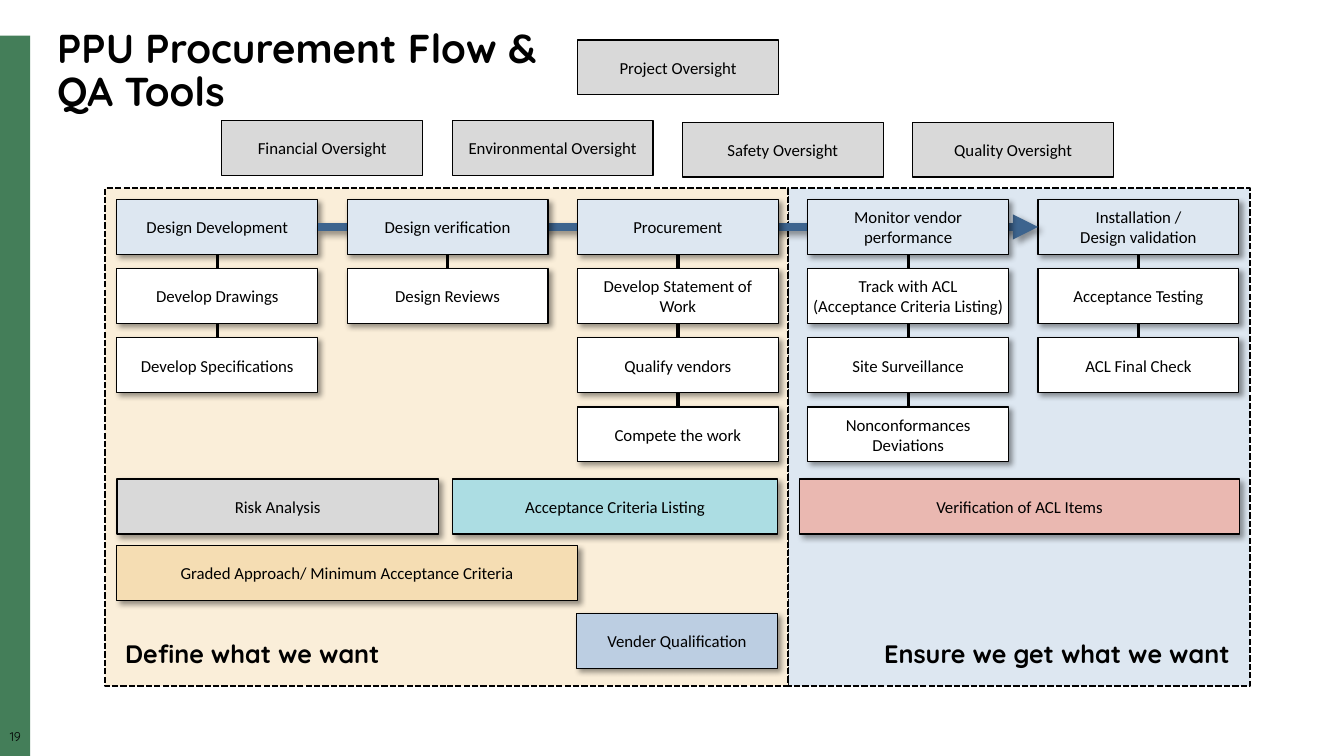
from lxml.etree import SubElement
from pptx import Presentation
from pptx.dml.color import RGBColor
from pptx.enum.dml import MSO_LINE
from pptx.enum.shapes import MSO_CONNECTOR, MSO_SHAPE
from pptx.enum.text import MSO_ANCHOR, PP_ALIGN
from pptx.oxml.ns import qn
from pptx.util import Pt

COLOURS = {
    "green": "447E59", "black": "000000", "white": "FFFFFF", "grey": "D9D9D9",
    "cream": "FAEED9", "pale blue": "DDE7F1", "arrow": "3D648E", "sand": "F5DDB3",
    "teal": "ACDDE3", "rose": "EAB8B1", "blue": "BCCEE2",
}
CARD_WIDTH, CARD_HEIGHT = 143.5, 39.2
COLUMN_PITCH, ROW_PITCH = 164.5, 49.4

# Each column: its heading, then its steps
COLUMNS = [
    ["Design Development", "Develop Drawings", "Develop Specifications"],
    ["Design verification", "Design Reviews"],
    ["Procurement", "Develop Statement of Work", "Qualify vendors", "Compete the work"],
    ["Monitor vendor performance", "Track with ACL\n(Acceptance Criteria Listing)",
     "Site Surveillance", "Nonconformances Deviations"],
    ["Installation /\nDesign validation", "Acceptance Testing", "ACL Final Check"],
]
# Left and top within the panels, width, text, colour
TOOLS = [
    (8.6, 248.2, 329, "Graded Approach/ Minimum Acceptance Criteria", "sand"),
    (8.6, 200.7, 229.7, "Risk Analysis", "grey"),
    (248.4, 200.7, 232.2, "Acceptance Criteria Listing", "teal"),
    (496.1, 200.7, 314.6, "Verification of ACL Items", "rose"),
    (337, 296.7, CARD_WIDTH, "Vender Qualification", "blue"),
]
OVERSIGHTS = ["Financial Oversight", "Environmental Oversight",
              "Safety Oversight", "Quality Oversight"]


def colour(name):
    return RGBColor.from_string(COLOURS[name])


def set_effects(shape, shadow):
    """Give the shape a soft shadow, or an empty effect list."""
    effects = SubElement(shape._element.spPr, qn("a:effectLst"))
    if shadow:
        outer = SubElement(effects, qn("a:outerShdw"), blurRad=str(Pt(4)),
                           dist=str(Pt(3)), dir="2700000", algn="tl", rotWithShape="0")
        black = SubElement(outer, qn("a:srgbClr"), val=COLOURS["black"])
        SubElement(black, qn("a:alpha"), val="40000")


def write(frame, text, size, font="Calibri", align=PP_ALIGN.CENTER, bold=False, spacing=None):
    frame.word_wrap = True
    for index, line in enumerate(text.split("\n")):
        paragraph = frame.add_paragraph() if index else frame.paragraphs[0]
        paragraph.text = line
        paragraph.alignment = align
        paragraph.line_spacing = spacing
        paragraph.font.name = font
        paragraph.font.size = Pt(size)
        paragraph.font.bold = bold
        paragraph.font.color.rgb = colour("black")


def add_rectangle(slide, left, top, width, height, fill):
    shape = slide.shapes.add_shape(MSO_SHAPE.RECTANGLE, Pt(left), Pt(top), Pt(width), Pt(height))
    shape.fill.solid()
    shape.fill.fore_color.rgb = colour(fill)
    return shape


def add_card(slide, left, top, text, fill, width=CARD_WIDTH, shadow=True, side_inset=7.2):
    card = add_rectangle(slide, left, top, width, CARD_HEIGHT, fill)
    card.line.color.rgb = colour("black")
    card.line.width = Pt(0.85)
    set_effects(card, shadow)
    frame = card.text_frame
    frame.vertical_anchor = MSO_ANCHOR.MIDDLE
    frame.margin_left = frame.margin_right = Pt(side_inset)
    write(frame, text, 12)
    return card


def add_link(slide, start, start_side, end, end_side, line_colour, width, arrow=False):
    link = slide.shapes.add_connector(MSO_CONNECTOR.STRAIGHT, 0, 0, 0, 0)
    link.begin_connect(start, start_side)
    link.end_connect(end, end_side)
    link.line.color.rgb = colour(line_colour)
    link.line.width = Pt(width)
    if arrow:
        SubElement(link.line._get_or_add_ln(), qn("a:tailEnd"), type="triangle")
    set_effects(link, shadow=arrow)


def add_panel(slide, left, top, width, height, text, fill, align):
    panel = add_rectangle(slide, left, top, width, height, fill)
    panel.shadow.inherit = False
    panel.line.color.rgb = colour("black")
    panel.line.width = Pt(1.5)
    panel.line.dash_style = MSO_LINE.SQUARE_DOT
    frame = panel.text_frame
    frame.vertical_anchor = MSO_ANCHOR.BOTTOM
    frame.margin_left = frame.margin_right = Pt(14.4)
    frame.margin_bottom = Pt(12)
    write(frame, text, 18, "Quicksand", align, bold=True, spacing=0.9)


def add_column(slide, left, top, labels):
    """Stack a heading and its steps, linked downwards; return the heading."""
    cards = []
    for row, label in enumerate(labels):
        cards.append(add_card(slide, left, top + row * ROW_PITCH, label,
                              "white" if row else "pale blue",
                              side_inset=0 if "(" in label else 7.2))
    for upper, lower in zip(cards, cards[1:]):
        add_link(slide, upper, 2, lower, 0, "black", 2.25)
    return cards[0]


def add_flow(slide, left, top):
    def column(index):
        return add_column(slide, left + index * COLUMN_PITCH, top, COLUMNS[index])

    # The arrow runs behind the middle columns
    first, last = column(0), column(4)
    add_link(slide, first, 3, last, 1, "arrow", 6, arrow=True)
    for index in (1, 2, 3):
        column(index)


def add_tools(slide, left, top):
    for x, y, width, text, fill in TOOLS:
        add_card(slide, left + x, top + y, text, fill, width)


def add_oversight(slide, left, top):
    add_card(slide, left + 254.2, top, "Project Oversight", "grey", shadow=False)
    for index, text in enumerate(OVERSIGHTS):
        drop = 57.6 if index < 2 else 58.7
        add_card(slide, left + index * COLUMN_PITCH, top + drop, text, "grey", shadow=False)


def add_frame(slide, height):
    # Side band and slide number
    band = add_rectangle(slide, 0, 25.5, 21.6, height - 25.5, "green")
    band.line.fill.background()
    band.shadow.inherit = False
    number = slide.shapes.add_textbox(0, Pt(522), Pt(22), Pt(12.2)).text_frame
    number.margin_left = number.margin_right = number.margin_top = number.margin_bottom = 0
    write(number, "19", 9, "Quicksand", spacing=0.9)
    # Title
    title = slide.shapes.add_textbox(Pt(33.8), Pt(16.6), Pt(357), Pt(62.6)).text_frame
    write(title, "PPU Procurement Flow & QA Tools", 28.8, "Quicksand",
          PP_ALIGN.LEFT, bold=True, spacing=0.9)


def main():
    presentation = Presentation()
    presentation.slide_width, presentation.slide_height = Pt(960), Pt(540)
    slide = presentation.slides.add_slide(presentation.slide_layouts[6])
    add_frame(slide, 540)

    # Two panels side by side
    left, top, height = 74.9, 134.5, 355.6
    define_width, ensure_width = 488.1, 329.8
    add_panel(slide, left + define_width, top, ensure_width, height,
              "Ensure we get what we want", "pale blue", PP_ALIGN.RIGHT)
    add_panel(slide, left, top, define_width, height,
              "Define what we want", "cream", PP_ALIGN.LEFT)

    add_oversight(slide, 158.5, 28.6)
    add_flow(slide, left + 8.6, top + 8)
    add_tools(slide, left, top + 7)
    presentation.save("out.pptx")


if __name__ == "__main__":
    main()
